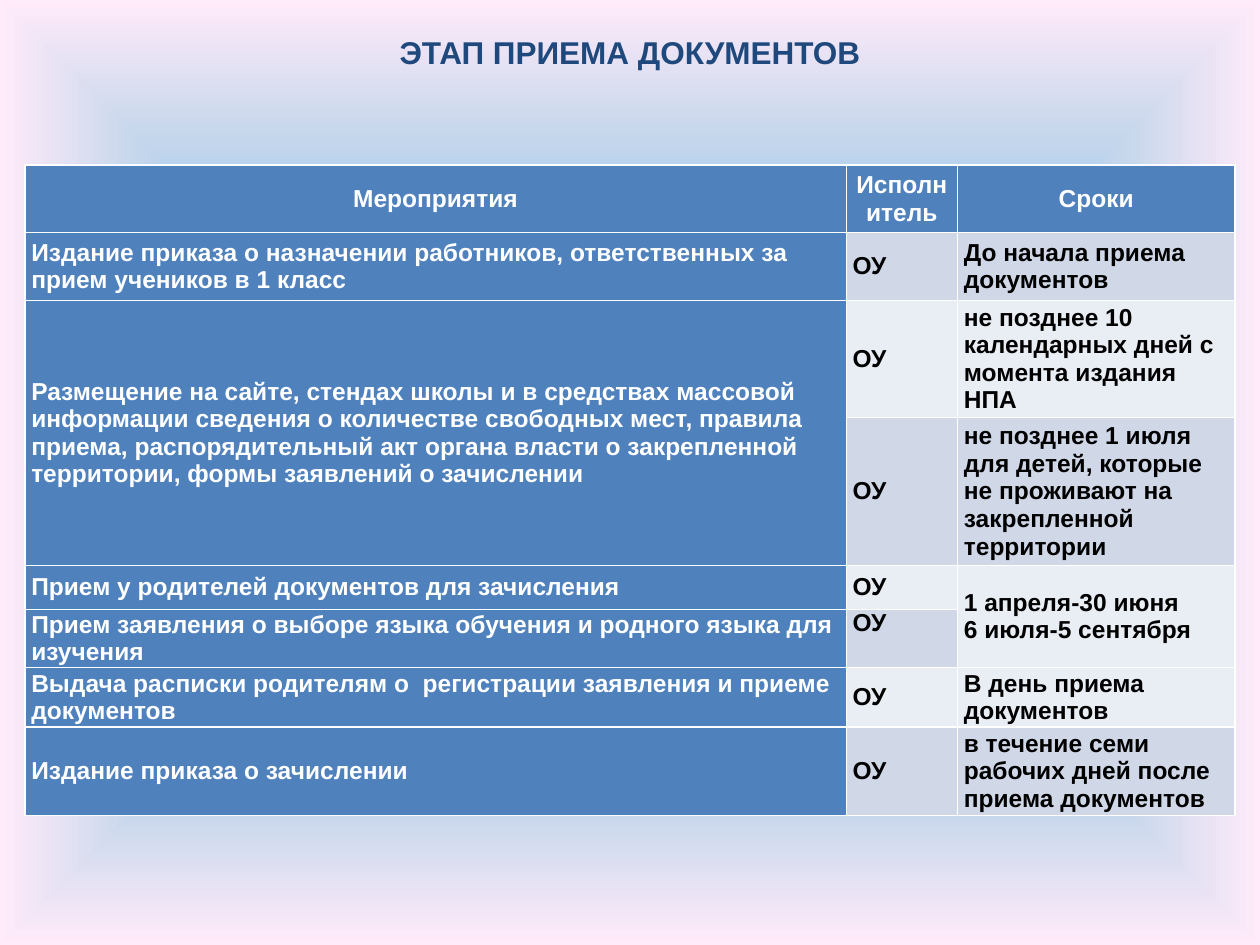
from pptx import Presentation
from pptx.dml.color import RGBColor
from pptx.enum.text import MSO_ANCHOR, PP_ALIGN
from pptx.oxml import parse_xml
from pptx.oxml.ns import nsdecls
from pptx.util import Cm, Pt

WHITE, BLACK, BLUE, NAVY = "FFFFFF", "000000", "4F81BD", "1F497D"
BANDS = ("D0D8E8", "E9EDF4")
GLOW = {0: "5E9EFF", 40: "85C2FF", 70: "C4D6EB", 100: "FFEBFA"}
COLUMN_WIDTHS = (16.56, 2.24, 5.6)
ROW_HEIGHTS = (1.36, 1.37, 2.37, 2.98, 0.89, 1.18, 1.2, 1.78)
CELL_FORMAT = {
    "margin_left": Cm(0.13),
    "margin_right": Cm(0.13),
    "margin_top": 0,
    "margin_bottom": 0,
    "vertical_anchor": MSO_ANCHOR.MIDDLE,
}
ROWS = (
    ("Мероприятия", "Исполнитель", "Сроки"),
    ("Издание приказа о назначении работников, ответственных за прием учеников в 1 класс",
     "ОУ", "До начала приема документов"),
    ("Размещение на сайте, стендах школы и в средствах массовой информации сведения "
     "о количестве свободных мест, правила приема, распорядительный акт органа власти "
     "о закрепленной территории, формы заявлений о зачислении",
     "ОУ", "не позднее 10 календарных дней с момента издания НПА"),
    (None, "ОУ", "не позднее 1 июля для детей, которые не проживают на закрепленной территории"),
    ("Прием у родителей документов для зачисления",
     "ОУ", "1 апреля-30 июня\n6 июля-5 сентября"),
    ("Прием заявления о выборе языка обучения и родного языка для изучения", "ОУ", None),
    ("Выдача расписки родителям о  регистрации заявления и приеме документов",
     "ОУ", "В день приема документов"),
    ("Издание приказа о зачислении",
     "ОУ", "в течение семи рабочих дней после приема документов"),
)


def color(value):
    return RGBColor.from_string(value)


def apply(target, values):
    for name, value in values.items():
        setattr(target, name, value)


def write(frame, text, size, ink, align):
    frame.text = text
    for para in frame.paragraphs:
        para.alignment = align
        for span in para.runs:
            apply(span.font, {"name": "Arial", "size": Pt(size), "bold": True})
            span.font.color.rgb = color(ink)


def add_borders(cell, points):
    properties = cell._tc.get_or_add_tcPr()
    for side, width in zip("LRTB", points):
        properties.append(parse_xml(
            f'<a:ln{side} {nsdecls("a")} w="{Pt(width)}"><a:solidFill>'
            f'<a:srgbClr val="{WHITE}"/></a:solidFill></a:ln{side}>'))


def paint_background(page):
    stops = "".join(f'<a:gs pos="{place * 1000}"><a:srgbClr val="{value}"/></a:gs>'
                    for place, value in GLOW.items())
    page._element.cSld.insert(0, parse_xml(
        f'<p:bg {nsdecls("p", "a")}><p:bgPr><a:gradFill><a:gsLst>{stops}</a:gsLst>'
        '<a:path path="shape"><a:fillToRect l="50000" t="50000" r="50000" b="50000"/>'
        '</a:path></a:gradFill><a:effectLst/></p:bgPr></p:bg>'))


def add_title(page, left, top, width, height):
    box = page.shapes.add_textbox(left, top, width, height)
    box.text_frame.word_wrap = True
    write(box.text_frame, "ЭТАП ПРИЕМА ДОКУМЕНТОВ", 18, NAVY, PP_ALIGN.CENTER)


def add_schedule(page, left, top, width, height):
    table = page.shapes.add_table(
        len(ROWS), len(COLUMN_WIDTHS), left, top, width, height).table
    for column, share in zip(table.columns, COLUMN_WIDTHS):
        column.width = int(width * share / sum(COLUMN_WIDTHS))
    for row, share in zip(table.rows, ROW_HEIGHTS):
        row.height = int(height * share / sum(ROW_HEIGHTS))

    for row, texts in enumerate(ROWS):
        header = row == 0
        for column, text in enumerate(texts):
            cell = table.cell(row, column)
            strong = header or column == 0
            apply(cell, CELL_FORMAT)
            add_borders(cell, (1, 1, 1, 1))
            cell.fill.solid()
            cell.fill.fore_color.rgb = color(BLUE if strong else BANDS[(row - 1) % 2])
            if text is None:
                table.cell(row - 1, column).merge(cell)
            else:
                write(cell.text_frame, text, 14, WHITE if strong else BLACK,
                      PP_ALIGN.CENTER if header else PP_ALIGN.LEFT)
    table.cell(5, 1).vertical_anchor = MSO_ANCHOR.TOP


def main():
    deck = Presentation()
    apply(deck, {"slide_width": Cm(25.4), "slide_height": Cm(19.05)})
    page = deck.slides.add_slide(deck.slide_layouts[6])
    paint_background(page)
    add_schedule(page, Cm(0.5), Cm(3.33), Cm(24.4), Cm(13.11))
    add_title(page, 0, Cm(0.55), deck.slide_width, Cm(1.02))
    deck.save("out.pptx")


if __name__ == "__main__":
    main()
